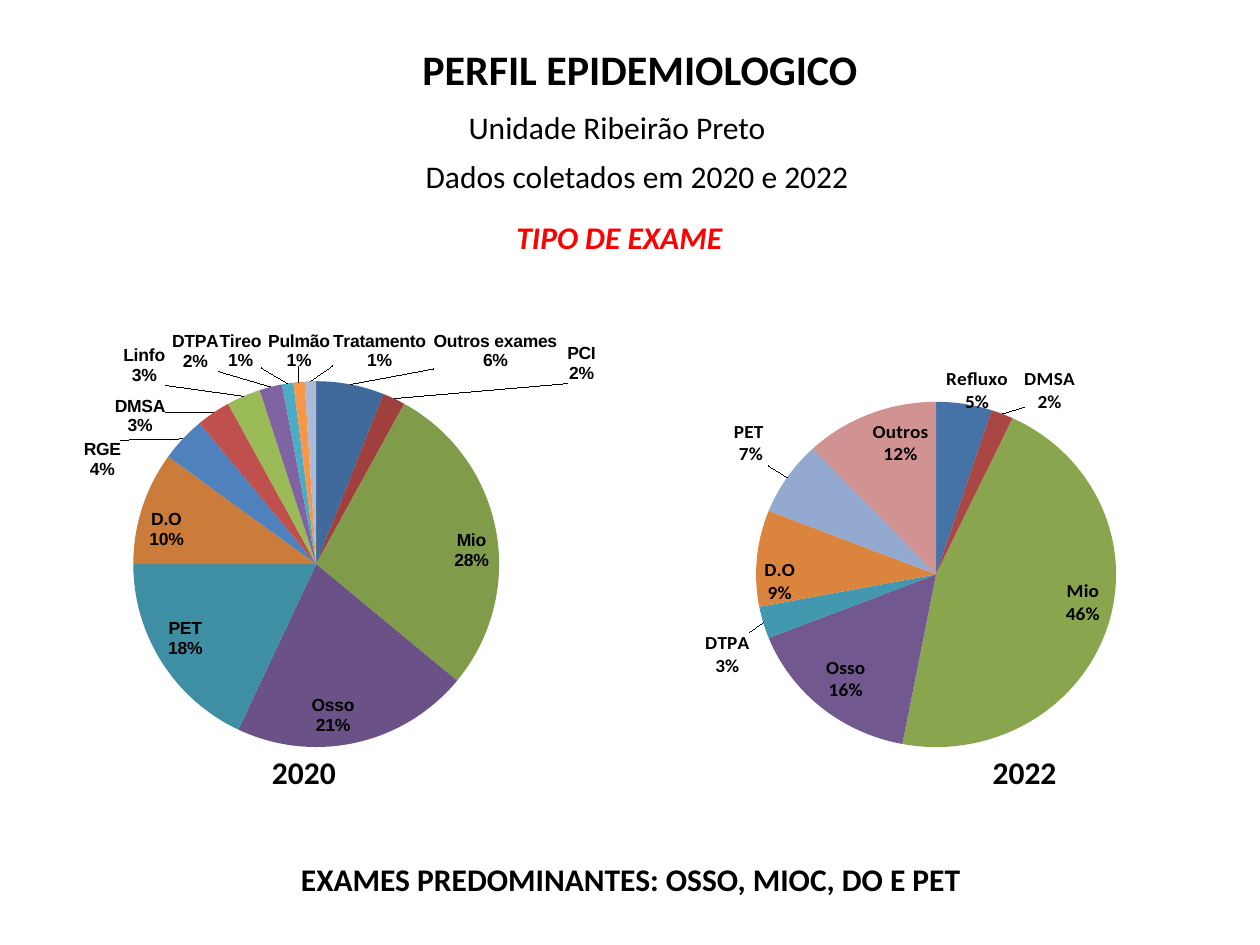
"""Build the exam type slide with its 2020 and 2022 pie charts."""
import pptx
import pptx.chart.data
import pptx.dml.color
import pptx.enum.chart
import pptx.enum.text
import pptx.oxml
import pptx.oxml.ns
import pptx.util
from lxml import etree

Inches = pptx.util.Inches
Position = pptx.enum.chart.XL_LABEL_POSITION
qn = pptx.oxml.ns.qn

TEXTS = [
    ("PERFIL EPIDEMIOLOGICO", (2.06, 0.3, 6.04, 0.5), {"size": 24, "bold": True, "centred": True}),
    ("Unidade Ribeirão Preto", (3.62, 0.81, 2.59, 0.4), {}),
    ("Dados coletados em 2020 e 2022", (3.28, 1.2, 3.6, 0.4), {}),
    ("TIPO DE EXAME", (4, 1.68, 1.88, 0.4), {"bold": True, "italic": True, "color": "FF0000"}),
    ("2020", (2.06, 5.93, 0.71, 0.4), {"bold": True}),
    ("2022", (7.78, 5.93, 0.71, 0.4), {"bold": True}),
    ("EXAMES PREDOMINANTES: OSSO, MIOC, DO E PET", (2.29, 6.78, 5.49, 0.4), {"bold": True}),
]

CHARTS = [
    {
        "box": (-0.09, 2.63, 5, 3.3),
        "plot": (0.06, 0.12, 0.92, 0.88),
        "font": {"name": "Arial", "size": 10, "bold": True},
        "slices": [
            ("Outros exames", 6, "406A9B", (0.13, -0.02)),
            ("PCI", 2, "9F403E", (0.27, -0.02)),
            ("Mio", 28, "809B4A", None),
            ("Osso", 21, "6A5286", None),
            ("PET", 18, "3E8FA4", None),
            ("D.O", 10, "CB7C3A", None),
            ("RGE", 4, "4F81BD", (-0.09, 0.11)),
            ("DMSA", 3, "C0504D", (-0.07, 0.07)),
            ("Linfo", 3, "9BBB59", (-0.12, -0.01)),
            ("DTPA", 2, "8064A2", (-0.08, -0.02)),
            ("Tireo", 1, "4BACC6", (-0.04, -0.02)),
            ("Pulmão", 1, "F79646", (0.05, -0.02)),
            ("Tratamento", 1, "AABAD7", (0.11, -0.02)),
        ],
    },
    {
        "box": (4.91, 2.79, 5.09, 3.14),
        "plot": (0.02, 0.09, 0.95, 0.91),
        "font": {"name": "Calibri", "size": 11, "bold": True},
        "slices": [
            ("Refluxo", 5, "4572A7", (-0.03, 0.01)),
            ("DMSA", 2, "AA4643", (0.03, 0)),
            ("Mio", 46, "89A54E", None),
            ("Osso", 16, "71588F", None),
            ("DTPA", 3, "4198AF", (-0.01, 0.02)),
            ("D.O", 9, "DB843D", None),
            ("PET ", 7, "93A9CF", (-0.02, -0.02)),
            ("Outros", 12, "D19392", None),
        ],
    },
]


def rgb(value):
    """Return a colour from its hex string."""
    return pptx.dml.color.RGBColor.from_string(value)


def set_font(font, values):
    """Apply a dict of format values to a font."""
    values = {"name": "Calibri", "size": 18, "color": "000000", **values}
    font.color.rgb = rgb(values.pop("color"))
    values["size"] = pptx.util.Pt(values["size"])
    for name, value in values.items():
        setattr(font, name, value)


def add_text(slide, text, box, values):
    """Add one line of text, centred lines wrapping in their box."""
    values = dict(values)
    centred = values.pop("centred", False)
    frame = slide.shapes.add_textbox(*map(Inches, box)).text_frame
    frame.word_wrap = centred
    frame.auto_size = pptx.enum.text.MSO_AUTO_SIZE.SHAPE_TO_FIT_TEXT
    paragraph = frame.paragraphs[0]
    if centred:
        paragraph.alignment = pptx.enum.text.PP_ALIGN.CENTER
    run = paragraph.add_run()
    run.text = text
    set_font(run.font, values)


def make_layout(values):
    """Return a manual chart layout from a dict of its parts."""
    layout = etree.Element(qn("c:layout"))
    manual = etree.SubElement(layout, qn("c:manualLayout"))
    for name, value in values.items():
        etree.SubElement(manual, qn(f"c:{name}")).set("val", str(value))
    return layout


def set_plot_area(chart, box):
    """Fix the inner plot area as fractions of the chart."""
    area = chart.element.find(f".//{qn('c:plotArea')}")
    for layout in area.findall(qn("c:layout")):
        area.remove(layout)
    modes = {"layoutTarget": "inner", "xMode": "edge", "yMode": "edge"}
    area.insert(0, make_layout({**modes, **dict(zip("xywh", box))}))


def finish_labels(labels, offsets):
    """Show category over percentage and shift the outside labels."""
    element = labels._element
    for label, offset in zip(element.findall(qn("c:dLbl")), offsets):
        if offset:
            for layout in label.findall(qn("c:layout")):
                label.remove(layout)
            label.insert(1, make_layout(dict(zip("xy", offset))))
    for group in [element, *element.findall(qn("c:dLbl"))]:
        for name, value in {"showVal": "0", "showCatName": "1", "showPercent": "1"}.items():
            group.find(qn(f"c:{name}")).set("val", value)
        last = group.find(qn("c:showBubbleSize"))
        if last is None:
            last = group.find(qn("c:showPercent"))
        separator = etree.Element(qn("c:separator"))
        separator.text = "\n"
        last.addnext(separator)
    leader = element.find(qn("c:showLeaderLines"))
    if leader is None:
        leader = etree.SubElement(element, qn("c:showLeaderLines"))
    leader.set("val", "1")


def add_pie(slide, box, plot, font, slices):
    """Add a pie chart with a label on each slice."""
    names, values, colors, offsets = zip(*slices)
    data = pptx.chart.data.CategoryChartData()
    data.categories = names
    data.add_series("Series 1", values)
    kind = pptx.enum.chart.XL_CHART_TYPE.PIE
    chart = slide.shapes.add_chart(kind, *map(Inches, box), data).chart
    chart.has_legend = chart.has_title = False
    set_font(chart.font, {"size": 10})
    set_plot_area(chart, plot)
    chart.plots[0].vary_by_categories = True
    series = chart.plots[0].series[0]
    labels = series.data_labels
    labels.show_category_name = labels.show_percentage = True
    labels.show_value = False
    labels.number_format = "0%"
    labels.number_format_is_linked = False
    set_font(labels.font, font)
    for index, (color, offset) in enumerate(zip(colors, offsets)):
        point = series.points[index]
        point.format.fill.solid()
        point.format.fill.fore_color.rgb = rgb(color)
        set_font(point.data_label.font, font)
        point.data_label.position = Position.OUTSIDE_END if offset else Position.INSIDE_END
    finish_labels(labels, offsets)


def main():
    """Build and save the presentation."""
    presentation = pptx.Presentation()
    presentation.slide_width, presentation.slide_height = Inches(10), Inches(7.5)
    slide = presentation.slides.add_slide(presentation.slide_layouts[6])
    for text in TEXTS:
        add_text(slide, *text)
    for chart in CHARTS:
        add_pie(slide, **chart)
    presentation.save("out.pptx")


if __name__ == "__main__":
    main()
